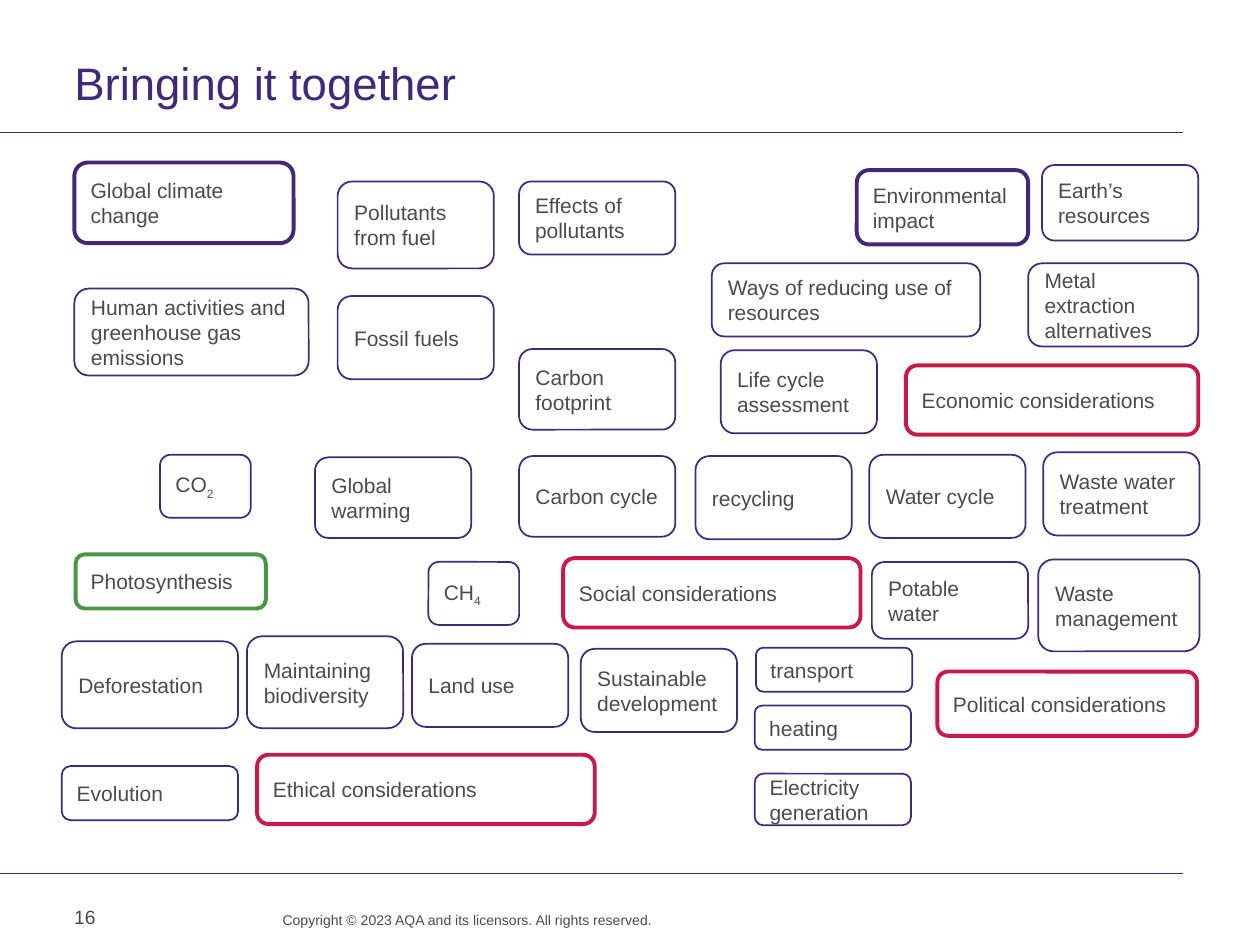
from pptx import Presentation, util as u
from pptx.dml.color import RGBColor
from pptx.enum import shapes, text
from pptx.oxml.ns import qn
from lxml import etree

PURPLE = RGBColor(0x41, 0x28, 0x78)
RED = RGBColor(0xC8, 0x19, 0x4B)
GREEN = RGBColor(0x4B, 0x96, 0x46)
GREY = RGBColor(0x4B, 0x4B, 0x4B)
FONT = "Arial"
PX = 9144  # 100 px to the inch
THIN, THICK = 1, 2.25
CARD = 124  # usual card width

# Topic cards: left, top, width, height, label (a tuple adds a subscript)
TOPICS = [
    (268, 144, CARD, 69, "Pollutants from fuel"),
    (412, 144, CARD, 58, "Effects of pollutants"),
    (827, 131, CARD, 60, "Earth’s resources"),
    (59, 229, 186, 69, "Human activities and greenhouse gas emissions"),
    (268, 235, CARD, 66, "Fossil fuels"),
    (565, 209, 213, 58, "Ways of reducing use of resources"),
    (816, 209, 135, 66, "Metal extraction alternatives"),
    (412, 277, CARD, 64, "Carbon footprint"),
    (572, 278, CARD, 66, "Life cycle assessment"),
    (127, 361, 72, 50, ("CO", "2")),
    (250, 363, CARD, 64, "Global warming"),
    (412, 362, CARD, 64, "Carbon cycle"),
    (552, 362, CARD, 66, "recycling"),
    (690, 361, CARD, 66, "Water cycle"),
    (828, 359, CARD, 66, "Waste water treatment"),
    (340, 446, 72, 50, ("CH", "4")),
    (692, 446, CARD, 61, "Potable water"),
    (824, 444, 128, 73, "Waste management"),
    (49, 509, 140, 69, "Deforestation"),
    (196, 505, CARD, 73, "Maintaining biodiversity"),
    (327, 511, CARD, 66, "Land use"),
    (461, 515, CARD, 66, "Sustainable development"),
    (600, 514, CARD, 35, "transport"),
    (599, 560, CARD, 35, "heating"),
    (599, 614, CARD, 41, "Electricity generation"),
    (49, 608, 140, 43, "Evolution"),
]
KEY_TOPICS = [
    (59, 129, 174, 64, "Global climate change"),
    (680, 135, 136, 59, "Environmental impact"),
]
CONSIDERATIONS = [
    (719, 290, 232, 55, "Economic considerations"),
    (447, 443, 236, 55, "Social considerations"),
    (744, 533, 206, 51, "Political considerations"),
    (204, 599, 268, 55, "Ethical considerations"),
]
PROCESSES = [(60, 440, 151, 43, "Photosynthesis")]


def px(*lengths):
    return [u.Emu(length * PX) for length in lengths]


def add_run(paragraph, words, size, color=GREY):
    run = paragraph.add_run()
    run.text = words
    run.font.name = FONT
    run.font.size = u.Pt(size)
    run.font.color.rgb = color
    return run


def set_frame(frame, anchor, margins=None):
    frame.word_wrap = True
    frame.auto_size = text.MSO_AUTO_SIZE.NONE
    frame.vertical_anchor = anchor
    if margins:
        (frame.margin_left, frame.margin_top,
         frame.margin_right, frame.margin_bottom) = px(*margins)
    return frame.paragraphs[0]


def add_rule(slide, top):
    line = slide.shapes.add_connector(shapes.MSO_CONNECTOR.STRAIGHT, *px(0, top, 939, top))
    line.line.color.rgb = PURPLE
    line.line.width = u.Pt(0.6)
    etree.SubElement(line._element.spPr, qn("a:effectLst"))


def add_title(slide, words):
    title = slide.shapes.title
    title.left, title.top, title.width, title.height = px(59, 48, 880, 47)
    paragraph = set_frame(title.text_frame, text.MSO_ANCHOR.TOP, (0, 0, 10, 0))
    paragraph.alignment = text.PP_ALIGN.LEFT
    paragraph.line_spacing = u.Pt(28)
    add_run(paragraph, words, 26, PURPLE)


def add_label(slide, box, words, size, anchor, margins=None):
    label = slide.shapes.add_textbox(*px(*box))
    paragraph = set_frame(label.text_frame, anchor, margins)
    add_run(paragraph, words, size)
    return paragraph


def add_card(slide, box, label, color, weight):
    card = slide.shapes.add_shape(shapes.MSO_SHAPE.ROUNDED_RECTANGLE, *px(*box))
    card.shadow.inherit = False
    card.fill.background()
    card.line.color.rgb = color
    card.line.width = u.Pt(weight)
    paragraph = set_frame(card.text_frame, text.MSO_ANCHOR.MIDDLE)
    paragraph.alignment = text.PP_ALIGN.LEFT
    words, *subscripts = (label,) if isinstance(label, str) else label
    add_run(paragraph, words, 12)
    for subscript in subscripts:
        run = add_run(paragraph, subscript, 12)
        run.font._element.set("baseline", "-25000")


def main():
    presentation = Presentation()
    presentation.slide_width, presentation.slide_height = px(1000, 750)
    slide = presentation.slides.add_slide(presentation.slide_layouts[5])

    # Header and footer
    for top in (105, 693):
        add_rule(slide, top)
    add_title(slide, "Bringing it together")
    notice = add_label(slide, (216, 723, 302, 25),
                       "Copyright © 2023 AQA and its licensors. All rights reserved.",
                       8, text.MSO_ANCHOR.TOP, (0, 0, 0, 0))
    notice.alignment = text.PP_ALIGN.RIGHT
    notice.line_spacing = u.Pt(10)
    add_label(slide, (49, 708, 76, 40), "16", 11, text.MSO_ANCHOR.MIDDLE)

    # Cards, by kind
    for cards, color, weight in (
        (TOPICS, PURPLE, THIN),
        (KEY_TOPICS, PURPLE, THICK),
        (CONSIDERATIONS, RED, THICK),
        (PROCESSES, GREEN, THICK),
    ):
        for *box, label in cards:
            add_card(slide, box, label, color, weight)

    presentation.save("out.pptx")


if __name__ == "__main__":
    main()
